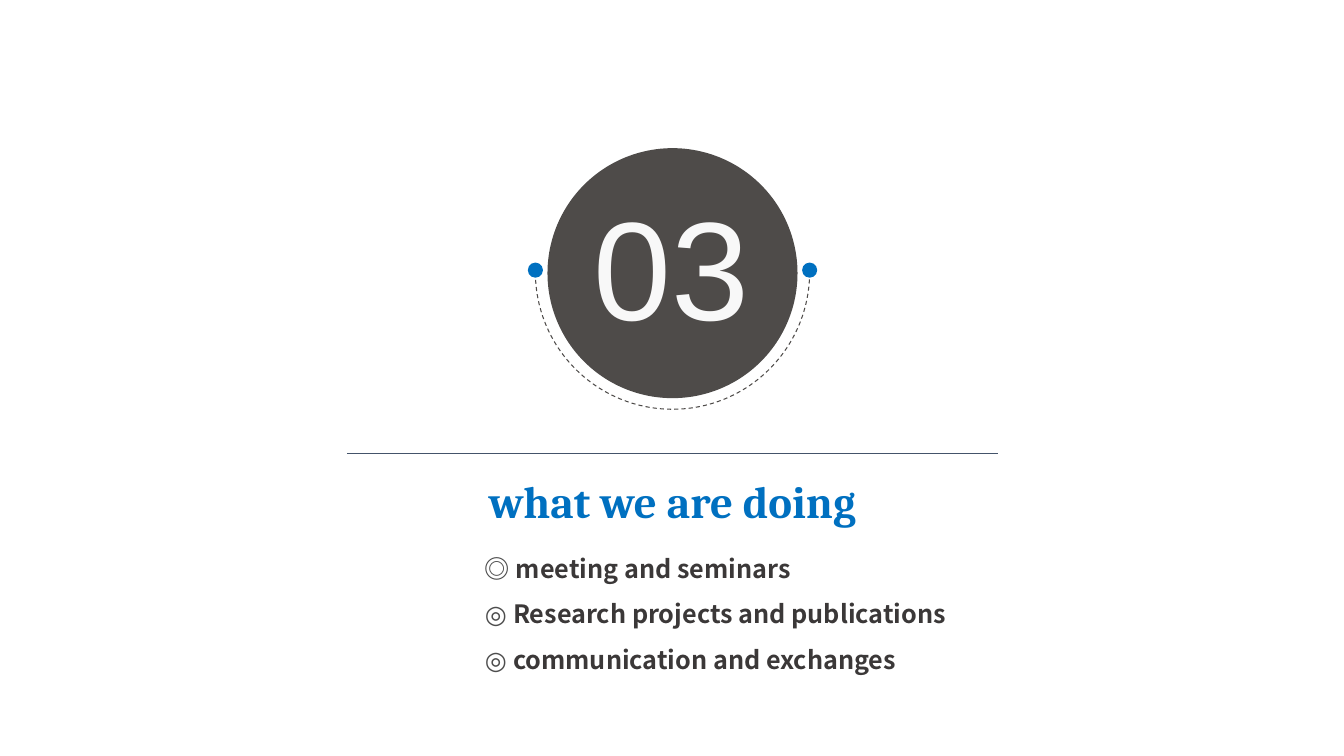
from dataclasses import dataclass

from lxml import etree
from pptx import Presentation
from pptx.dml.color import RGBColor
from pptx.enum.dml import MSO_LINE
from pptx.enum.shapes import MSO_CONNECTOR, MSO_SHAPE
from pptx.enum.text import MSO_ANCHOR, MSO_AUTO_SIZE, PP_ALIGN
from pptx.oxml.ns import qn
from pptx.util import Inches, Pt

OVAL, ARC = MSO_SHAPE.OVAL, MSO_SHAPE.ARC
STRAIGHT = MSO_CONNECTOR.STRAIGHT
DASH = MSO_LINE.DASH
TOP = MSO_ANCHOR.TOP
NO_AUTOFIT = MSO_AUTO_SIZE.NONE
LEFT, CENTER = PP_ALIGN.LEFT, PP_ALIGN.CENTER


@dataclass(frozen=True)
class Theme:
    charcoal: RGBColor = RGBColor(0x4E, 0x4B, 0x49)
    blue: RGBColor = RGBColor(0x00, 0x70, 0xC0)
    rule: RGBColor = RGBColor(0x44, 0x54, 0x6A)
    number: RGBColor = RGBColor(0xF8, 0xF8, 0xF8)
    marker: RGBColor = RGBColor(0x4D, 0x4D, 0x4D)
    topic: RGBColor = RGBColor(0x3B, 0x38, 0x38)
    number_size: Pt = Pt(100)
    title_size: Pt = Pt(32)
    topic_size: Pt = Pt(18)
    number_font: str = "Arial"
    title_font: str = "Cambria"
    topic_font: str = "Noto Sans CJK SC"
    marker_font: str = "Lato"


THEME = Theme()
TOPICS = [
    ("meeting and seminars", THEME.topic_font),
    ("Research projects and publications", THEME.marker_font),
    ("communication and exchanges", THEME.marker_font),
]
BADGE_X, BADGE_Y = 6.67, 2.71
ARC_Y, ARC_RADIUS = 2.7, 1.36
DOT_Y = 2.68


def apply(target, formats):
    for attribute, value in formats.items():
        setattr(target, attribute, value)


def place(shape, left, top, width, height):
    apply(shape, {"left": Inches(left), "top": Inches(top),
                  "width": Inches(width), "height": Inches(height)})


def add_disc(slide, x, y, diameter, color):
    """Add a filled circle centred on x, y."""
    disc = slide.shapes.add_shape(
        OVAL, Inches(x - diameter / 2), Inches(y - diameter / 2),
        Inches(diameter), Inches(diameter))
    disc.shadow.inherit = False
    disc.fill.solid()
    disc.fill.fore_color.rgb = color
    disc.line.fill.background()


def add_dashed_half_circle(slide, x, y, radius):
    half = slide.shapes.add_shape(
        ARC, Inches(x - radius), Inches(y - radius),
        Inches(2 * radius), Inches(2 * radius))
    # Angles are in units of 100000/60000 degree: 0 to 180 degrees.
    half.adjustments[0], half.adjustments[1] = 0, 108
    half.shadow.inherit = False
    half.fill.background()
    half.line.color.rgb = THEME.charcoal
    apply(half.line, {"width": Pt(0), "dash_style": DASH})


def add_rule(slide, left, right, y):
    rule = slide.shapes.add_connector(
        STRAIGHT, Inches(left), Inches(y), Inches(right), Inches(y))
    rule.line.color.rgb = THEME.rule
    rule.line.width = Pt(0.75)
    etree.SubElement(rule._element.spPr, qn("a:effectLst"))


def add_run(paragraph, text, font, size, color, bold):
    run = paragraph.add_run()
    run.text = text
    apply(run.font, {"name": font, "size": size, "bold": bold})
    run.font.color.rgb = color
    east_asian = etree.Element(qn("a:ea"), typeface=font)
    run.font._element.find(qn("a:latin")).addnext(east_asian)


def add_number(slide, text):
    box = slide.shapes.add_textbox(
        Inches(5.66), Inches(1.74), Inches(2), Inches(1.78))
    apply(box.text_frame, {"word_wrap": True, "auto_size": NO_AUTOFIT})
    number = box.text_frame.paragraphs[0]
    number.alignment = CENTER
    add_run(number, text, THEME.number_font,
            THEME.number_size, THEME.number, False)


def fill_title(title, text):
    place(title, 4.69, 4.65, 3.96, 0.64)
    apply(title.text_frame, {"word_wrap": False, "vertical_anchor": TOP,
                             "auto_size": NO_AUTOFIT})
    heading = title.text_frame.paragraphs[0]
    heading.alignment = CENTER
    add_run(heading, text, THEME.title_font, THEME.title_size, THEME.blue, True)


def fill_topics(body, topics):
    place(body, 4.71, 5.29, 6.3, 1.46)
    frame = body.text_frame
    apply(frame, {"word_wrap": True, "vertical_anchor": TOP,
                  "auto_size": NO_AUTOFIT})
    for index, (topic, marker_font) in enumerate(topics):
        item = frame.add_paragraph() if index else frame.paragraphs[0]
        apply(item, {"alignment": LEFT, "line_spacing": 1.5,
                     "space_before": Pt(0)})
        properties = item._p.get_or_add_pPr()
        properties.set("marL", "0")
        properties.set("indent", "0")
        etree.SubElement(properties, qn("a:buNone"))
        add_run(item, "◎ ", marker_font, THEME.topic_size, THEME.marker, True)
        add_run(item, topic, THEME.topic_font, THEME.topic_size, THEME.topic, True)


def main():
    deck = Presentation()
    apply(deck, {"slide_width": Inches(13.33), "slide_height": Inches(7.5)})
    slide = deck.slides.add_slide(deck.slide_layouts[1])

    add_disc(slide, BADGE_X, BADGE_Y, 2.48, THEME.charcoal)
    add_dashed_half_circle(slide, BADGE_X, ARC_Y, ARC_RADIUS)
    for side in (1, -1):
        add_disc(slide, BADGE_X + side * ARC_RADIUS, DOT_Y, 0.15, THEME.blue)
    add_number(slide, "03")
    add_rule(slide, 3.44, 9.9, 4.5)
    fill_title(slide.shapes.title, "what we are doing")
    fill_topics(slide.placeholders[1], TOPICS)

    deck.save("out.pptx")


if __name__ == "__main__":
    main()
